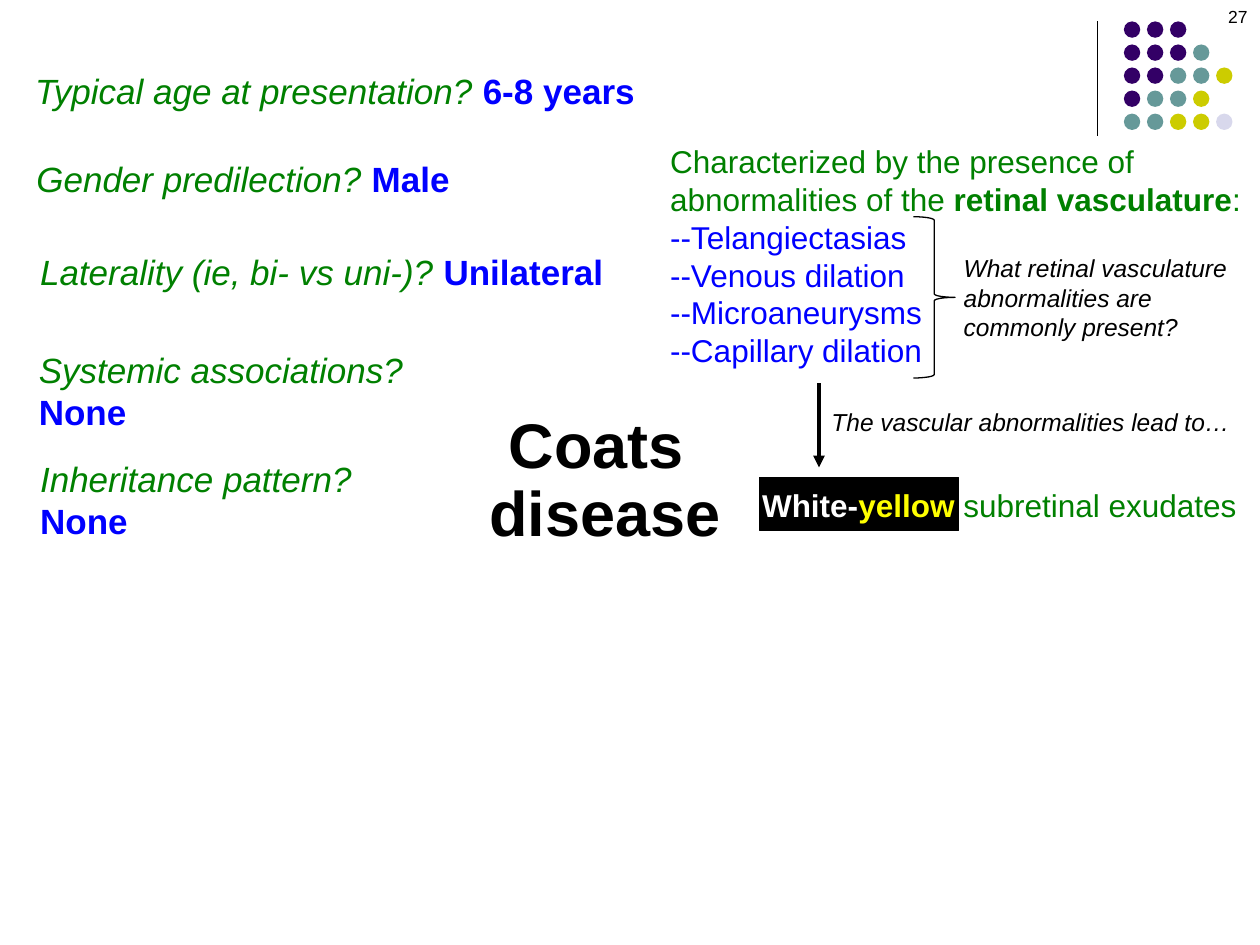
from lxml.etree import SubElement
from pptx import Presentation
from pptx.dml.color import RGBColor
from pptx.enum.shapes import MSO_CONNECTOR, MSO_SHAPE
from pptx.enum.text import MSO_ANCHOR, PP_ALIGN
from pptx.oxml.ns import qn
from pptx.util import Inches, Pt

# The page is a grid of 100 columns by 75 rows; boxes are (left, top, width, height)
COLUMNS, ROWS = 100, 75
WIDTH, HEIGHT = Inches(10), Inches(7.5)
COLORS = {
    "black": "000000", "white": "FFFFFF", "green": "008000", "blue": "0000FF",
    "yellow": "FFFF00", "purple": "330066", "teal": "669999", "olive": "CCCC00",
    "lavender": "D8D8EC",
}
ASKED = {"color": "green", "italic": True}
ANSWERED = {"color": "blue", "bold": True}
REMARK = {"color": "black", "italic": True}


def rgb(name):
    return RGBColor.from_string(COLORS[name])


def across(columns):
    return round(WIDTH * columns / COLUMNS)


def down(rows):
    return round(HEIGHT * rows / ROWS)


def place(box):
    left, top, width, height = box
    return across(left), down(top), across(width), down(height)


def within(box, left, top, width, height):
    """Box offset from the corner of its region."""
    return box[0] + left, box[1] + top, width, height


def write(shape, paragraphs, size, align=PP_ALIGN.LEFT, spacing=None):
    """Fill a shape with paragraphs, each a list of (text, format) spans."""
    frame = shape.text_frame
    frame.word_wrap = True
    frame.vertical_anchor = MSO_ANCHOR.TOP
    if align == PP_ALIGN.LEFT:
        frame.margin_right = 0
    for index, spans in enumerate(paragraphs):
        para = frame.add_paragraph() if index else frame.paragraphs[0]
        para.alignment = align
        para.line_spacing = spacing
        for text, look in spans:
            if text == "\n":
                para.add_line_break()
                continue
            span = para.add_run()
            span.text = text
            span.font.color.rgb = rgb(look["color"])
            values = {"name": "Arial", "size": Pt(size),
                      "bold": look.get("bold", False),
                      "italic": look.get("italic", False)}
            for name, value in values.items():
                setattr(span.font, name, value)


def add_text(page, box, paragraphs, size, **layout):
    write(page.shapes.add_textbox(*place(box)), paragraphs, size, **layout)


def add_figure(page, kind, box, fill=None, line=None):
    shape = page.shapes.add_shape(kind, *place(box))
    shape.shadow.inherit = False
    if fill:
        shape.fill.solid()
        shape.fill.fore_color.rgb = rgb(fill)
    else:
        shape.fill.background()
    if line:
        shape.line.color.rgb = rgb(line)
        shape.line.width = Pt(0.75)
    else:
        shape.line.fill.background()
    return shape


def add_line(page, column, top, bottom, weight, arrow=False):
    line = page.shapes.add_connector(
        MSO_CONNECTOR.STRAIGHT, across(column), down(top), across(column), down(bottom))
    line.line.color.rgb = rgb("black")
    line.line.width = Pt(weight)
    if arrow:
        SubElement(line.line._get_or_add_ln(), qn("a:tailEnd"), type="triangle")
    SubElement(line._element.spPr, qn("a:effectLst"))


def draw_corner(page, box):
    """Rule, dot pattern and page number."""
    left, top, _, height = box
    add_line(page, left, top, top + height, 0.75)
    pattern = ["PPP", "PPPT", "PPTTO", "PTTO", "TTOOL"]
    shades = {"P": "purple", "T": "teal", "O": "olive", "L": "lavender"}
    pitch, dot = 1.83, 1.3
    for row, letters in enumerate(pattern):
        for column, letter in enumerate(letters):
            spot = within(box, 2.1 + column * pitch, row * pitch, dot, dot)
            add_figure(page, MSO_SHAPE.OVAL, spot, fill=shades[letter])
    add_text(page, (76.7, 0, 23.3, 5), [[("27", {"color": "black"})]], 10,
             align=PP_ALIGN.RIGHT)


def draw_questions(page, box):
    """Column of questions, each with its answer beside or below it."""
    questions = [
        (0, 0, "Typical age at presentation? ", "6-8 years", False),
        (0.1, 7, "Gender predilection? ", "Male", False),
        (0.4, 14.4, "Laterality (ie, bi- vs uni-)? ", "Unilateral", False),
        (0.3, 22.2, "Systemic associations? ", "None", True),
        (0.4, 30.8, "Inheritance pattern? ", "None", True),
    ]
    for left, top, question, answer, below in questions:
        spans = [(question, ASKED), (answer, ANSWERED)]
        if below:
            spans.insert(1, ("\n", {}))
        width, height = (35, 7.7) if below else (box[2], 4.4)
        add_text(page, within(box, left, top, width, height), [spans], 20)


def draw_title(page, box):
    heading = {"color": "black", "bold": True}
    add_text(page, box, [[("Coats ", heading)], [("disease", heading)]], 36,
             align=PP_ALIGN.CENTER, spacing=0.9)


def draw_vasculature(page, box):
    """Panel of vascular findings with a brace and its remark."""
    plain, strong = {"color": "green"}, {"color": "green", "bold": True}
    findings = ["Telangiectasias", "Venous dilation", "Microaneurysms",
                "Capillary dilation"]
    paragraphs = [
        [("Characterized by the presence of", plain)],
        [("abnormalities of the ", plain), ("retinal vasculature", strong), (":", plain)],
    ] + [[("--" + finding, {"color": "blue"})] for finding in findings]
    panel = add_figure(page, MSO_SHAPE.RECTANGLE, box, fill="white")
    write(panel, paragraphs, 18)
    add_figure(page, MSO_SHAPE.RIGHT_BRACE, within(box, 20.3, 6.4, 3.3, 12.8), line="black")
    remark = "What retinal vasculature abnormalities are commonly present?"
    add_text(page, within(box, 23.3, 8.8, 23.3, 8.1), [[(remark, REMARK)]], 14)


def draw_outcome(page, box):
    """Arrow down to the resulting exudates."""
    left, top, _, _ = box
    add_figure(page, MSO_SHAPE.RECTANGLE, within(box, 0.8, 7.5, 15.8, 4.2),
               fill="black", line="black")
    exudates = [("White-", {"color": "white", "bold": True}),
                ("yellow ", {"color": "yellow", "bold": True}),
                ("subretinal exudates", {"color": "green"})]
    add_text(page, within(box, 0, 7.7, 39.7, 4), [exudates], 18)
    add_line(page, left + 5.5, top, top + 6.7, 2.25, arrow=True)
    add_text(page, within(box, 5.5, 1.4, 33.8, 3.4),
             [[("The vascular abnormalities lead to…", REMARK)]], 14)


def main():
    deck = Presentation()
    deck.slide_width, deck.slide_height = WIDTH, HEIGHT
    page = deck.slides.add_slide(deck.slide_layouts[6])
    draw_corner(page, (87.1, 1.7, 12.9, 16.6))
    draw_questions(page, (1.8, 5, 50, 38.5))
    draw_title(page, (37.6, 32.4, 20.8, 12.2))
    draw_vasculature(page, (52.2, 10.8, 47.4, 19.2))
    draw_outcome(page, (59.5, 30.4, 39.7, 11.7))
    deck.save("out.pptx")


if __name__ == "__main__":
    main()
